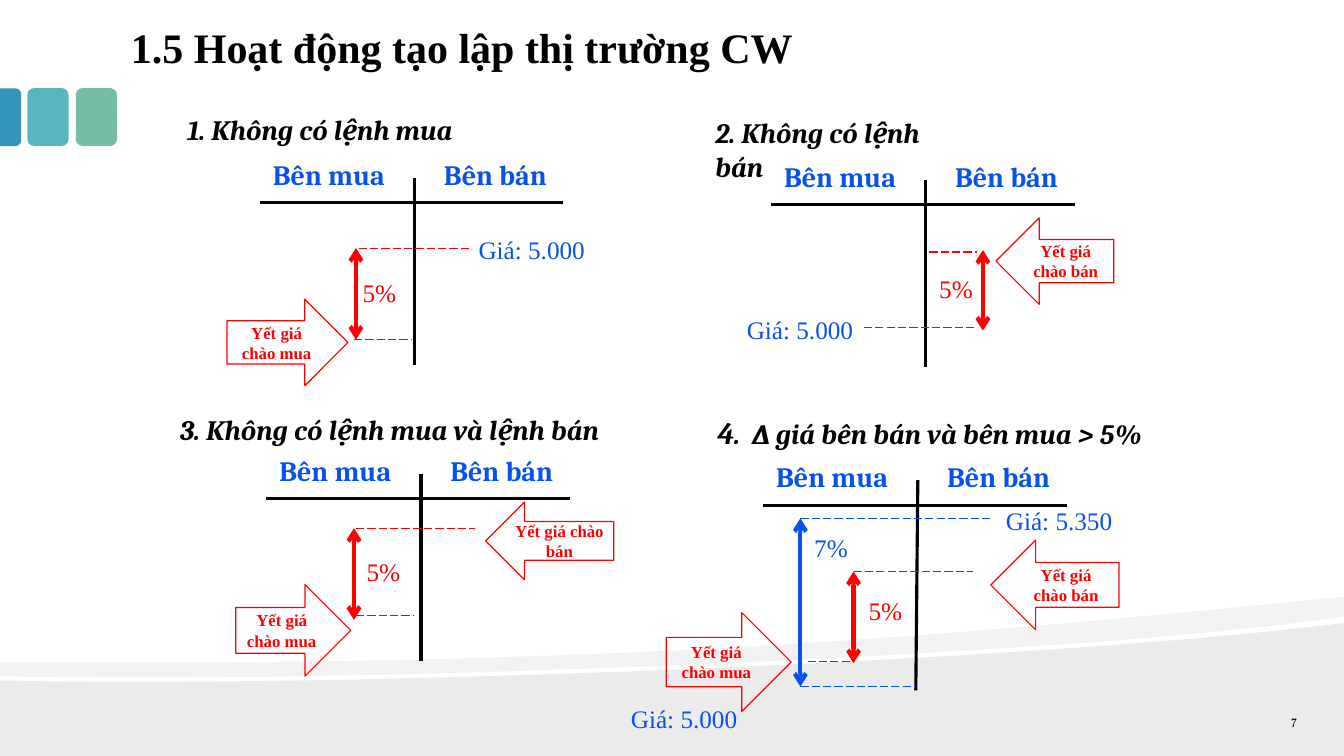
"""Build the slide on market making for covered warrants."""
from lxml import etree
from pptx import Presentation
from pptx import util as u
from pptx.dml.color import RGBColor
from pptx.enum import dml, shapes, text
from pptx.oxml.ns import qn

BLACK, RED, BLUE = "000000", "FF0000", "0652EA"
SERIF, ROMAN = "Cambria", "Times New Roman"


def colour(target, code):
    if hasattr(target, "solid"):
        target.solid()
        target = target.fore_color
    target.rgb = RGBColor.from_string(code)


def write(frame, words, size, code, font, bold=False, italic=False):
    frame.word_wrap = True
    para = frame.paragraphs[0]
    span = para.add_run()
    span.text = words
    span.font.size = u.Pt(size)
    span.font.name = font
    span.font.bold = bold
    span.font.italic = italic
    colour(span.font.color, code)
    return para


deck = Presentation()
deck.slide_width, deck.slide_height = u.Cm(33.87), u.Cm(19.05)
page = deck.slides.add_slide(deck.slide_layouts[5])

lower_wave = [[(33.87, 15.7)], [(33.87, 19.05)], [(0, 19.05)], [(0, 17.15)],
              [(8.94, 17.35), (26.47, 16.64), (33.87, 15.7)]]
upper_wave = [[(33.87, 15.04)], [(33.87, 15.54)],
              [(31.9, 15.82), (29.19, 16.08), (26.14, 16.28)],
              [(17.73, 16.84), (6.55, 17.2), (0, 17.04)], [(0, 16.69)],
              [(16.56, 16.81), (24.66, 15.93), (33.87, 15.04)]]
for segments, opacity in [(lower_wave, 8), (upper_wave, 5)]:
    points = []
    for segment in segments:
        if len(segment) == 1:
            points += segment
            continue
        curve = [points[-1]] + segment
        for step in range(1, 31):
            t = step / 30
            weights = ((1 - t) ** 3, 3 * t * (1 - t) ** 2, 3 * t * t * (1 - t), t ** 3)
            points.append([sum(w * p[axis] for w, p in zip(weights, curve)) for axis in (0, 1)])
    corners = [(u.Cm(x), u.Cm(y)) for x, y in points]
    builder = page.shapes.build_freeform(*corners[0])
    builder.add_line_segments(corners[1:])
    wave = builder.convert_to_shape()
    wave.shadow.inherit = False
    wave.line.fill.background()
    colour(wave.fill, BLACK)
    tint = wave.fill._xPr.find(".//" + qn("a:srgbClr"))
    etree.SubElement(tint, qn("a:alpha")).set("val", str(opacity * 1000))

for kind, left, top, width, height, code in [
        ("ROUNDED_RECTANGLE", 1.91, 2.22, 1.04, 1.46, "75BDA7"),
        ("ROUNDED_RECTANGLE", 0.69, 2.22, 1.04, 1.46, "58B6C0"),
        ("ROUND_2_SAME_RECTANGLE", -0.46, 2.69, 1.46, 0.53, "3494BA")]:
    tab = page.shapes.add_shape(getattr(shapes.MSO_SHAPE, kind),
                                u.Cm(left), u.Cm(top), u.Cm(width), u.Cm(height))
    tab.shadow.inherit = False
    tab.line.fill.background()
    colour(tab.fill, code)
    if kind == "ROUND_2_SAME_RECTANGLE":
        tab.rotation = 90
        tab.adjustments[0] = 0.29

title = page.shapes.title
title.left, title.top, title.width, title.height = u.Cm(2.97), u.Cm(0.43), u.Cm(30.48), u.Cm(1.57)
title.text_frame.auto_size = text.MSO_AUTO_SIZE.NONE
title.text_frame.vertical_anchor = text.MSO_ANCHOR.BOTTOM
para = write(title.text_frame, "1.5 Hoạt động tạo lập thị trường CW", 30, BLACK, ROMAN, True)
para.alignment = text.PP_ALIGN.LEFT
number = page.shapes.add_textbox(u.Cm(30.76), u.Cm(17.91), u.Cm(2.26), u.Cm(0.51))
number.text_frame.vertical_anchor = text.MSO_ANCHOR.MIDDLE
write(number.text_frame, "7", 9, BLACK, "Vollkorn").alignment = text.PP_ALIGN.RIGHT
for frame in (title.text_frame, number.text_frame):
    frame.margin_left = frame.margin_right = u.Cm(0.33)
    frame.margin_top = frame.margin_bottom = u.Cm(0.18)

for words, left, top, width, height, before in [
        ("1. Không có lệnh mua", 4.47, 2.72, 12.01, 2.18, 6),
        ("2. Không có lệnh bán", 17.78, 2.79, 6.83, 1.12, 0),
        ("3. Không có lệnh mua và lệnh bán", 4.29, 10.26, 13.18, 1.12, 6),
        ("4.  ∆ giá bên bán và bên mua > 5%", 17.22, 10.29, 12.42, 2.36, 6)]:
    heading = page.shapes.add_textbox(u.Cm(left), u.Cm(top), u.Cm(width), u.Cm(height))
    if words.startswith("4"):
        write(heading.text_frame, "4", 22, BLACK, SERIF, True, True)
        heading.text_frame.paragraphs[0].alignment = text.PP_ALIGN.CENTER
        words = words[1:]
    para = write(heading.text_frame, words, 20, BLACK, SERIF, True, True)
    para.space_before = u.Pt(before)
    if height > 2:
        properties = para._p.get_or_add_pPr()
        properties.set("marL", str(u.Cm(1.27)))
        properties.set("indent", str(u.Cm(-1.27)))

lines = []
for left, axis, depth, slant in [(6.55, 5.11, 4.09, 0), (19.43, 5.16, 4.09, 0),
                                 (6.71, 12.57, 4.09, 0), (19.23, 12.73, 4.67, -0.05)]:
    stem = left + 3.9
    lines.append((left, axis, left + 7.65, axis, BLACK, "axis"))
    lines.append((stem, axis - 0.63, stem + slant, axis + depth, BLACK, "axis"))
    for words, shift in [("Bên mua", 0.08), ("Bên bán", 4.39)]:
        side = page.shapes.add_textbox(u.Cm(left + shift), u.Cm(axis - 1.27), u.Cm(3.58), u.Cm(1.96))
        write(side.text_frame, words, 20, BLUE, SERIF, True)

for x, top, bottom, code in [(8.97, 6.25, 8.56, RED), (8.92, 13.31, 15.62, RED),
                             (24.77, 6.3, 8.33, RED), (20.17, 13.06, 17.3, BLUE),
                             (21.51, 14.4, 16.71, RED)]:
    lines.append((x, top, x, bottom, code, "span"))
for left, right, y, code in [
        (9.04, 11.89, 6.25, RED), (8.92, 10.36, 8.56, RED),
        (23.42, 24.61, 6.35, RED), (21.77, 24.61, 8.26, RED),
        (8.97, 11.96, 13.31, RED), (8.97, 10.44, 15.52, RED),
        (20.17, 24.97, 13.06, BLUE), (20.17, 23.09, 17.3, BLUE),
        (21.51, 24.51, 14.4, RED), (20.35, 21.51, 16.66, RED)]:
    lines.append((left, y, right, y, code, "level"))

weights = {"axis": 2.25, "span": 3, "level": 0.75}
for x1, y1, x2, y2, code, role in lines:
    line = page.shapes.add_connector(shapes.MSO_CONNECTOR.STRAIGHT,
                                     u.Cm(x1), u.Cm(y1), u.Cm(x2), u.Cm(y2))
    line.line.width = u.Pt(weights[role])
    colour(line.line.fill, code)
    if role == "level":
        line.line.dash_style = dml.MSO_LINE.LONG_DASH
    if role == "span":
        for end in ("a:headEnd", "a:tailEnd"):
            etree.SubElement(line.line._get_or_add_ln(), qn(end)).set("type", "arrow")
    etree.SubElement(line._element.spPr, qn("a:effectLst"))

for words, left, top, width, code in [
        ("Giá: 5.000", 11.81, 5.77, 3.2, BLUE), ("5%", 8.89, 6.86, 1.4, RED),
        ("5%", 23.42, 6.76, 2.44, RED), ("Giá: 5.000", 18.57, 7.8, 3.2, BLUE),
        ("5%", 8.99, 13.89, 2.74, RED), ("7%", 20.27, 13.28, 2.74, BLUE),
        ("5%", 21.64, 14.88, 2.74, RED), ("Giá: 5.350", 25.1, 12.62, 3.2, BLUE),
        ("Giá: 5.000", 15.65, 17.6, 3.84, BLUE)]:
    label = page.shapes.add_textbox(u.Cm(left), u.Cm(top), u.Cm(width), u.Cm(1.02))
    write(label.text_frame, words, 18, code, ROMAN)

for side, left, top, width, height in [
        ("mua", 5.72, 7.54, 3.05, 2.18), ("bán", 25.1, 5.49, 2.97, 2.18),
        ("bán", 12.24, 12.65, 3.23, 1.96), ("mua", 5.94, 14.73, 2.9, 2.31),
        ("bán", 24.97, 13.61, 3.23, 2.26), ("mua", 16.79, 15.44, 3.15, 2.49)]:
    kind = shapes.MSO_SHAPE.RIGHT_ARROW if side == "mua" else shapes.MSO_SHAPE.LEFT_ARROW
    quote = page.shapes.add_shape(kind, u.Cm(left), u.Cm(top), u.Cm(width), u.Cm(height))
    quote.shadow.inherit = False
    quote.fill.background()
    quote.line.width = u.Pt(0.85)
    colour(quote.line.fill, RED)
    quote.text_frame.vertical_anchor = text.MSO_ANCHOR.MIDDLE
    para = write(quote.text_frame, "Yết giá chào " + side, 12, RED, ROMAN, True)
    para.alignment = text.PP_ALIGN.CENTER

deck.save("out.pptx")
